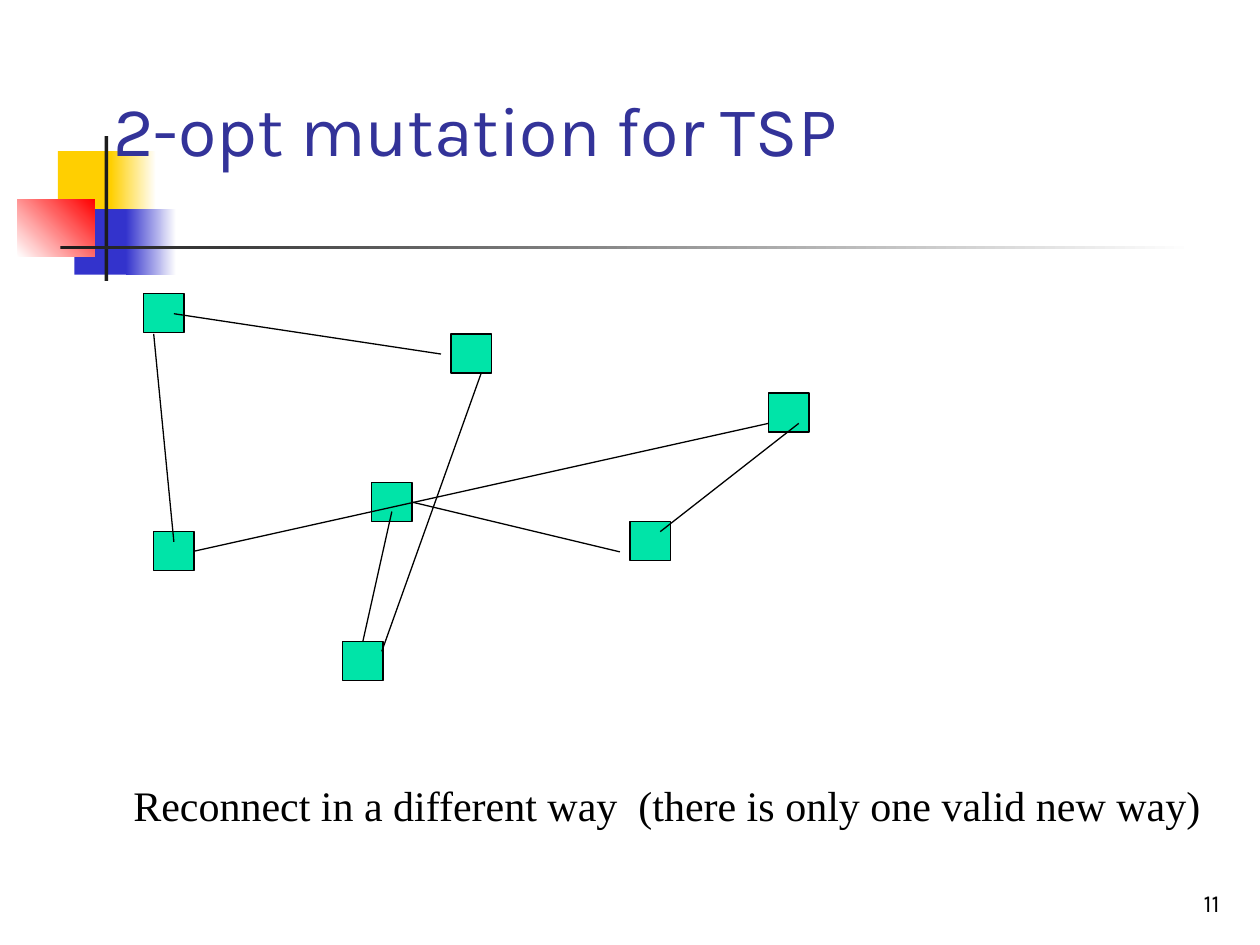
from dataclasses import dataclass

from lxml.etree import SubElement
from pptx import Presentation
from pptx.dml.color import RGBColor
from pptx.enum.shapes import MSO_CONNECTOR, MSO_SHAPE
from pptx.enum.text import MSO_ANCHOR, MSO_AUTO_SIZE, PP_ALIGN
from pptx.oxml.ns import qn
from pptx.util import Inches, Pt


@dataclass(frozen=True)
class Theme:
    """Colours, fonts and sizes of the slide."""
    yellow: str = "FFCF01"
    blue: str = "3333CC"
    red: str = "FF0000"
    white: str = "FFFFFF"
    dark: str = "1C1C1C"
    black: str = "000000"
    title: str = "333399"
    city: str = "00E4A8"
    heading_font: str = "Karla"
    body_font: str = "Times New Roman"
    title_size: int = 40
    body_size: int = 24
    number_size: int = 14
    line_width: float = 0.75


@dataclass(frozen=True)
class Box:
    """A rectangle in inches."""
    left: float
    top: float
    width: float
    height: float

    def inside(self, left, top, width, height):
        """Return a box placed relative to this one."""
        return Box(self.left + left, self.top + top, width, height)

    def lengths(self):
        """Return the four lengths for python-pptx."""
        return [Inches(n) for n in (self.left, self.top, self.width, self.height)]


THEME = Theme()
CITY_WIDTH, CITY_HEIGHT = 0.32, 0.31
TOP, LEFT, BOTTOM, RIGHT = range(4)

CITIES = {
    "north_west": (0, 0),
    "south": (1.58, 2.76),
    "south_east": (3.86, 1.81),
    "south_west": (0.08, 1.89),
    "centre": (1.81, 1.5),
    "north": (2.44, 0.32),
    "east": (4.96, 0.79),
}

ROADS = [
    ((0.24, 0.16), (2.36, 0.48)),
    ((0.08, 0.32), (0.24, 1.97)),
    (("centre", RIGHT), (3.78, 2.05)),
    ((4.1, 1.89), (5.2, 1.03)),
    ((2.68, 0.63), (1.89, 2.84)),
    ((1.97, 1.73), ("south", TOP)),
    (("south_west", RIGHT), (4.96, 1.03)),
]


def color(value):
    """Return a colour from its hex string."""
    return RGBColor.from_string(value)


def add_rectangle(page, box, start, end=None, angle=0):
    """Add a borderless rectangle with a solid or two-colour fill."""
    shape = page.shapes.add_shape(MSO_SHAPE.RECTANGLE, *box.lengths())
    shape.shadow.inherit = False
    shape.line.fill.background()
    if end is None:
        shape.fill.solid()
        shape.fill.fore_color.rgb = color(start)
    else:
        shape.fill.gradient()
        shape.fill.gradient_angle = angle
        for stop, value in zip(shape.fill.gradient_stops, (start, end)):
            stop.color.rgb = color(value)
    return shape


def add_text(page, box, text, font, size, ink, wrap=True,
             anchor=MSO_ANCHOR.TOP, align=PP_ALIGN.LEFT):
    """Add a one-paragraph text box."""
    frame = page.shapes.add_textbox(*box.lengths()).text_frame
    frame.word_wrap = wrap
    frame.auto_size = MSO_AUTO_SIZE.NONE if wrap else MSO_AUTO_SIZE.SHAPE_TO_FIT_TEXT
    frame.vertical_anchor = anchor
    frame.text = text
    para = frame.paragraphs[0]
    para.alignment = align
    for span in para.runs:
        span.font.name = font
        span.font.size = Pt(size)
        span.font.color.rgb = color(ink)


def add_ornament(page, box):
    """Draw the coloured squares and the crossing bars."""
    for bounds, *fill in (
        ((0.32, 0.12, 0.48, 0.52), THEME.yellow),
        ((0.74, 0.12, 0.36, 0.52), THEME.yellow, THEME.white),
        ((0.45, 0.58, 0.46, 0.52), THEME.blue),
        ((0.86, 0.58, 0.4, 0.52), THEME.blue, THEME.white),
        ((0, 0.5, 0.61, 0.46), THEME.white, THEME.red, 45),
        ((0.69, 0, 0.03, box.height), THEME.dark),
        ((0.34, 0.87, box.width - 0.34, 0.03), THEME.dark, THEME.white),
    ):
        add_rectangle(page, box.inside(*bounds), *fill)


def add_city(page, box):
    """Draw one outlined city square."""
    city = add_rectangle(page, box, THEME.city)
    city.line.color.rgb = color(THEME.black)
    city.line.width = Pt(THEME.line_width)
    return city


def add_road(page, box, cities, begin, end):
    """Draw a line whose ends are points or the sides of cities."""
    points = [(0, 0) if isinstance(spot[0], str) else spot for spot in (begin, end)]
    (x1, y1), (x2, y2) = points
    road = page.shapes.add_connector(
        MSO_CONNECTOR.STRAIGHT,
        Inches(box.left + x1), Inches(box.top + y1),
        Inches(box.left + x2), Inches(box.top + y2))
    for spot, connect in ((begin, road.begin_connect), (end, road.end_connect)):
        if isinstance(spot[0], str):
            connect(cities[spot[0]], spot[1])
    road.line.color.rgb = color(THEME.black)
    road.line.width = Pt(THEME.line_width)
    SubElement(road._element.spPr, qn("a:effectLst"))


def add_tour(page, box):
    """Draw the cities and the tour between them."""
    cities = {
        name: add_city(page, box.inside(*corner, CITY_WIDTH, CITY_HEIGHT))
        for name, corner in CITIES.items()
    }
    for begin, end in ROADS:
        add_road(page, box, cities, begin, end)


def add_title(page, box):
    """Write the slide title."""
    add_text(page, box, " 2-opt mutation for TSP", THEME.heading_font,
             THEME.title_size, THEME.title, anchor=MSO_ANCHOR.BOTTOM)


def add_caption(page, box):
    """Write the remark below the tour."""
    add_text(page, box,
             "Reconnect in a different way  (there is only one valid new way)",
             THEME.body_font, THEME.body_size, THEME.black, wrap=False)


def add_page_number(page, box):
    """Write the slide number."""
    add_text(page, box, "11", THEME.heading_font, THEME.number_size, THEME.black,
             anchor=MSO_ANCHOR.BOTTOM, align=PP_ALIGN.RIGHT)


def main():
    """Build and save the slide."""
    deck = Presentation()
    deck.slide_width, deck.slide_height = Inches(10), Inches(7.5)
    page = deck.slides.add_slide(deck.slide_layouts[6])
    add_ornament(page, Box(0.14, 1.08, 9.34, 1.15))
    add_page_number(page, Box(7.7, 6.83, 2.08, 0.5))
    add_title(page, Box(0.67, 0.44, 8.5, 0.96))
    add_tour(page, Box(1.14, 2.33, 5.28, 3.07))
    add_caption(page, Box(0.96, 6.14, 8.67, 0.5))
    deck.save("out.pptx")


if __name__ == "__main__":
    main()
